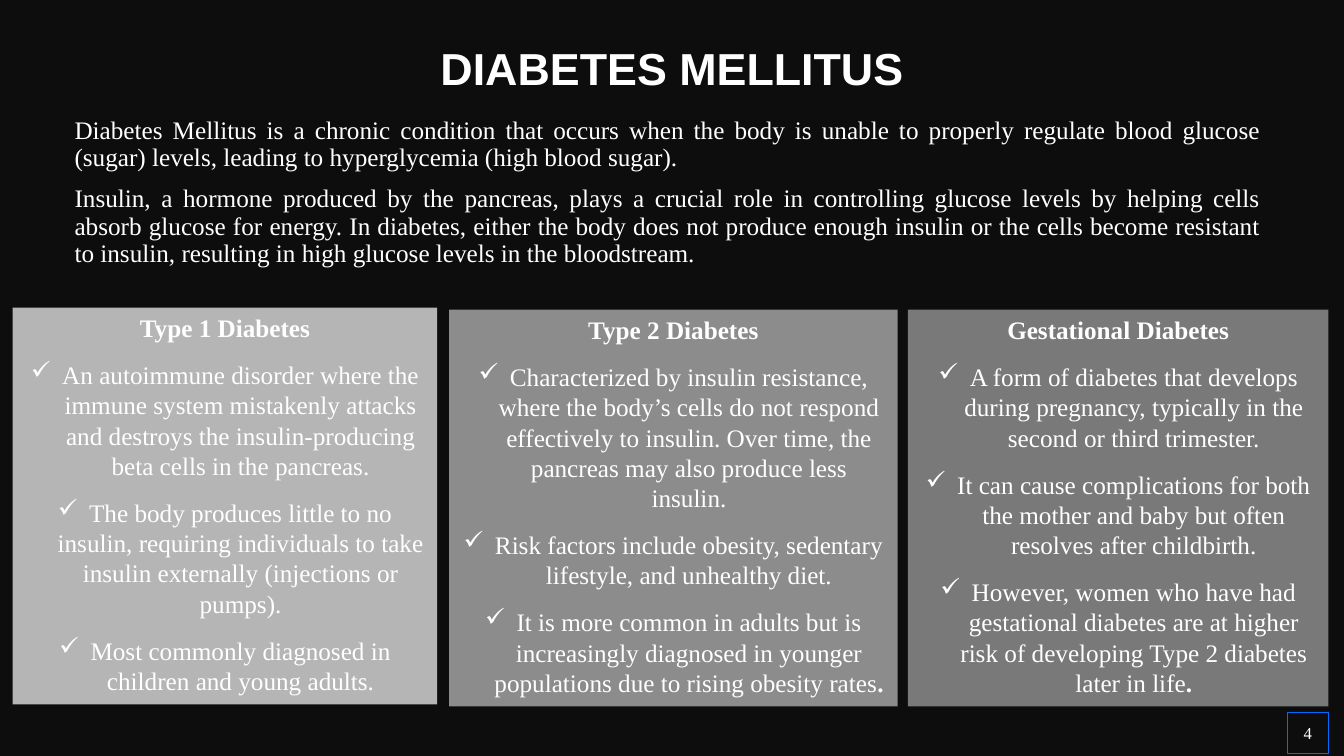
from lxml.etree import SubElement
from pptx import Presentation
from pptx.dml.color import RGBColor
from pptx.enum.shapes import MSO_SHAPE
from pptx.enum.text import MSO_ANCHOR, MSO_AUTO_SIZE, PP_ALIGN
from pptx.oxml.ns import qn
from pptx.util import Cm, Pt

COLORS = {
    "background": "0D0D0D",
    "text": "FFFFFF",
    "outline": "056AFF",
    "type 1": "B5B5B5",
    "type 2": "8C8C8C",
    "gestational": "797979",
}
TITLE = "DIABETES MELLITUS"
PAGE_NUMBER = "4"
INTRODUCTION = [
    "Diabetes Mellitus is a chronic condition that occurs when the body is unable to properly "
    "regulate blood glucose (sugar) levels, leading to hyperglycemia (high blood sugar).",
    "Insulin, a hormone produced by the pancreas, plays a crucial role in controlling glucose "
    "levels by helping cells absorb glucose for energy. In diabetes, either the body does not "
    "produce enough insulin or the cells become resistant to insulin, resulting in high glucose "
    "levels in the bloodstream.",
]
CARDS = [
    {
        "heading": "Type 1 Diabetes",
        "color": "type 1",
        "box": (0.32, 7.75, 10.7, 10.0),
        "points": [
            "An autoimmune disorder where the immune system mistakenly attacks and destroys "
            "the insulin-producing beta cells in the pancreas.",
            "The body produces little to no insulin, requiring individuals to take insulin "
            "externally (injections or pumps).",
            "Most commonly diagnosed in children and young adults.",
        ],
        "bold_end": "",
    },
    {
        "heading": "Type 2 Diabetes",
        "color": "type 2",
        "box": (11.32, 7.8, 11.3, 10.0),
        "points": [
            "Characterized by insulin resistance, where the body’s cells do not respond "
            "effectively to insulin. Over time, the pancreas may also produce less insulin.",
            "Risk factors include obesity, sedentary lifestyle, and unhealthy diet.",
            "It is more common in adults but is increasingly diagnosed in younger populations "
            "due to rising obesity rates",
        ],
        "bold_end": ".",
    },
    {
        "heading": "Gestational Diabetes",
        "color": "gestational",
        "box": (22.88, 7.8, 10.6, 10.0),
        "points": [
            "A form of diabetes that develops during pregnancy, typically in the second or "
            "third trimester.",
            "It can cause complications for both the mother and baby but often resolves after "
            "childbirth.",
            "However, women who have had gestational diabetes are at higher risk of developing "
            "Type 2 diabetes later in life",
        ],
        "bold_end": ".",
    },
]


def color(name):
    return RGBColor.from_string(COLORS[name])


def write(paragraph, text, size=18, font="Times New Roman", bold=False,
          align=PP_ALIGN.CENTER, line_spacing=None, before=0, after=0, bullet=None):
    run = paragraph.add_run()
    run.text = text
    run.font.size = Pt(size)
    run.font.name = font
    run.font.bold = bold
    run.font.color.rgb = color("text")
    paragraph.alignment = align
    paragraph.line_spacing = line_spacing
    paragraph.space_before = Pt(before)
    paragraph.space_after = Pt(after)
    if bullet:
        properties = paragraph._p.get_or_add_pPr()
        properties.set("marL", str(Cm(0.79)))
        properties.set("indent", str(-Cm(0.79)))
        SubElement(properties, qn("a:buChar")).set("char", bullet)


def remove_insets(frame):
    frame.margin_left = frame.margin_right = frame.margin_top = frame.margin_bottom = 0
    frame.vertical_anchor = MSO_ANCHOR.MIDDLE


def add_rectangle(slide, box):
    shape = slide.shapes.add_shape(MSO_SHAPE.RECTANGLE, *map(Cm, box))
    shape.shadow.inherit = False
    shape.text_frame.word_wrap = True
    return shape


def add_title(slide):
    title = slide.shapes.title
    title.left, title.top, title.width, title.height = map(Cm, (1.19, 1.19, 31.5, 1.19))
    remove_insets(title.text_frame)
    write(title.text_frame.paragraphs[0], TITLE, size=32, font="Arial", bold=True,
          line_spacing=0.9)


def add_introduction(slide):
    frame = slide.shapes.add_textbox(*map(Cm, (1.63, 2.84, 30.4, 3.73))).text_frame
    frame.word_wrap = True
    for index, text in enumerate(INTRODUCTION):
        paragraph = frame.add_paragraph() if index else frame.paragraphs[0]
        write(paragraph, text, align=PP_ALIGN.JUSTIFY, line_spacing=0.9, before=10)


def add_card(slide, card):
    shape = add_rectangle(slide, card["box"])
    shape.fill.solid()
    shape.fill.fore_color.rgb = color(card["color"])
    shape.line.fill.background()
    frame = shape.text_frame
    frame.vertical_anchor = MSO_ANCHOR.TOP
    frame.auto_size = MSO_AUTO_SIZE.SHAPE_TO_FIT_TEXT
    write(frame.paragraphs[0], card["heading"], bold=True, after=12)
    for point in card["points"]:
        paragraph = frame.add_paragraph()
        write(paragraph, point, after=12, bullet="✓")
    if card["bold_end"]:
        write(paragraph, card["bold_end"], bold=True, after=12)


def add_page_number(slide):
    shape = add_rectangle(slide, (32.44, 17.96, 1.04, 1.02))
    shape.fill.background()
    shape.line.color.rgb = color("outline")
    shape.line.width = Pt(0.75)
    remove_insets(shape.text_frame)
    write(shape.text_frame.paragraphs[0], PAGE_NUMBER, size=12)


def main():
    presentation = Presentation()
    presentation.slide_width = Cm(33.87)
    presentation.slide_height = Cm(19.05)
    slide = presentation.slides.add_slide(presentation.slide_layouts[5])
    slide.background.fill.solid()
    slide.background.fill.fore_color.rgb = color("background")
    add_title(slide)
    add_page_number(slide)
    add_introduction(slide)
    for card in CARDS:
        add_card(slide, card)
    presentation.save("out.pptx")


if __name__ == "__main__":
    main()
